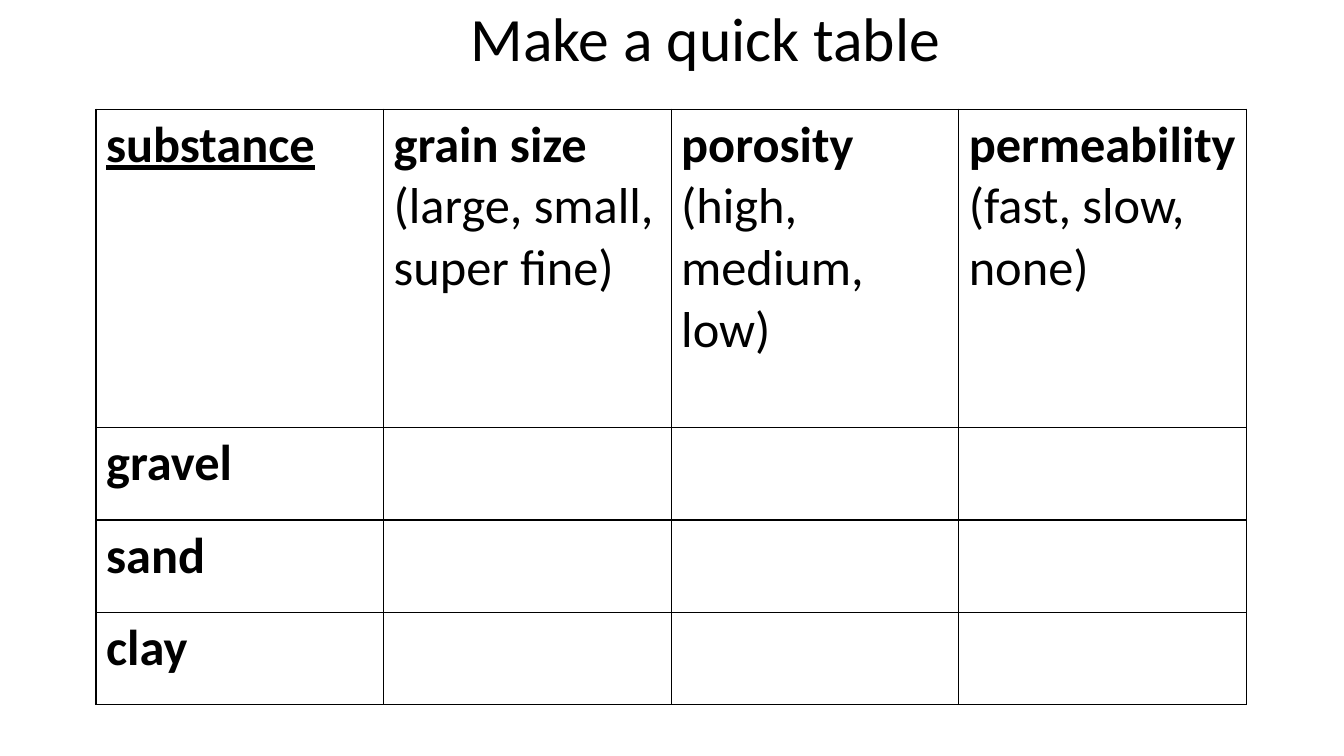
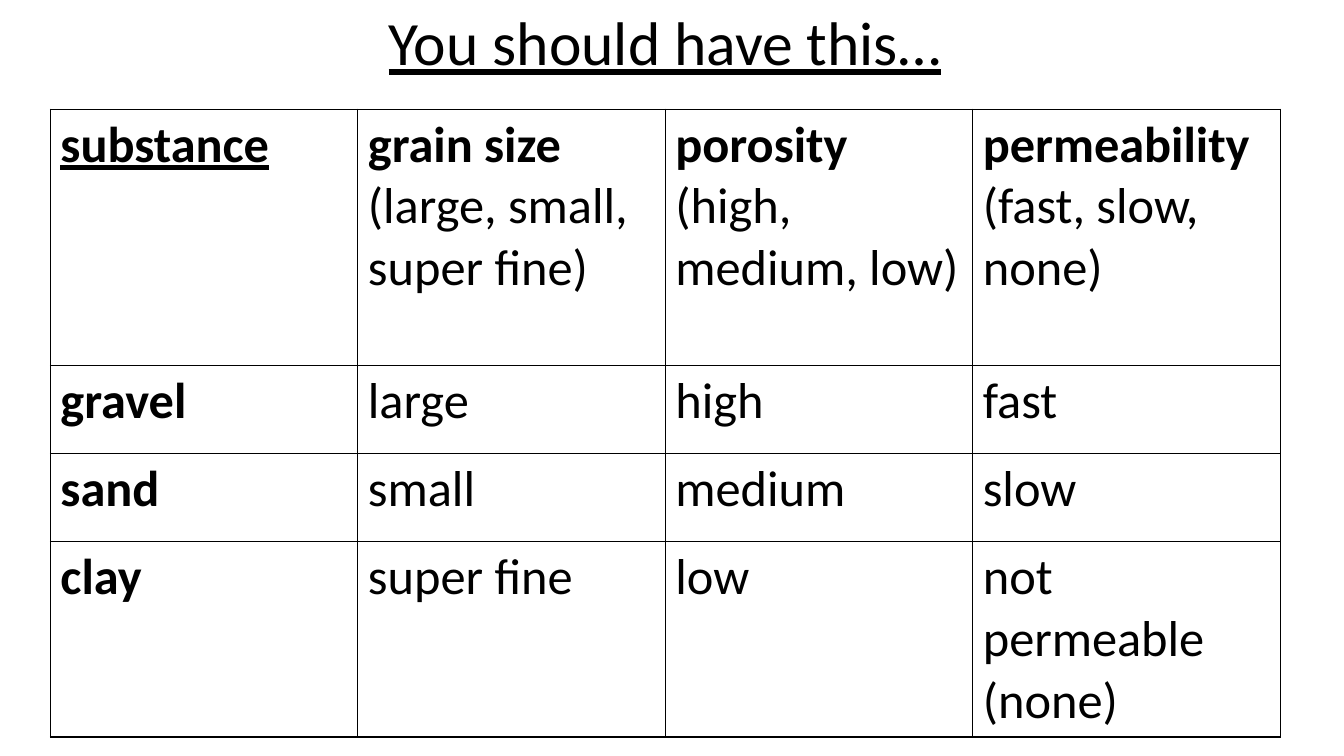
from lxml import etree
from pptx import Presentation
from pptx.dml.color import RGBColor
from pptx.enum import text
from pptx.oxml import ns
from pptx.util import Pt

COLORS = {"ink": "000000", "paper": "FFFFFF"}
HEADINGS = [("substance", ""), ("grain size ", "(large, small, super fine)"),
            ("porosity", " (high, medium, low)"),
            ("permeability", " (fast, slow, none)")]
SUBSTANCES = ["gravel", "sand", "clay"]
ANSWERS = [["large", "high", "fast"],
           ["small", "medium", "slow"],
           ["super fine", "low", "not permeable (none)"]]


class Deck:
    font = "Calibri"
    title_size = 44
    table_size = 36
    border = 1

    def __init__(self):
        self.prs = Presentation()
        self.prs.slide_width, self.prs.slide_height = Pt(960), Pt(540)
        self.s = None

    def add_slide(self):
        self.s = self.prs.slides.add_slide(self.prs.slide_layouts[6])
        fill = self.s.background.fill
        fill.solid()
        fill.fore_color.rgb = RGBColor.from_string(COLORS["paper"])

    def style(self, p, size):
        p.font.name = self.font
        p.font.size = Pt(size)
        p.font.color.rgb = RGBColor.from_string(COLORS["ink"])

    def title(self, words, left, width, height, underline=False):
        sp = self.s.shapes.add_textbox(Pt(left), 0, Pt(width), Pt(height))
        tf = sp.text_frame
        tf.word_wrap = True
        tf.vertical_anchor = text.MSO_ANCHOR.MIDDLE
        p = tf.paragraphs[0]
        p.text = words
        p.alignment = text.PP_ALIGN.CENTER
        p.line_spacing = 0.9
        self.style(p, self.title_size)
        p.font.underline = underline

    def outline(self, cell):
        """Draw all four borders of a table cell."""
        props = cell._tc.get_or_add_tcPr()
        for side in ("lnL", "lnR", "lnT", "lnB"):
            line = etree.SubElement(props, ns.qn("a:" + side), w=str(Pt(self.border)))
            fill = etree.SubElement(line, ns.qn("a:solidFill"))
            etree.SubElement(fill, ns.qn("a:srgbClr"), val=COLORS["ink"])

    def cell(self, cell, strong="", plain="", underline=False):
        self.outline(cell)
        cell.fill.background()
        p = cell.text_frame.paragraphs[0]
        self.style(p, self.table_size)
        for words, bold in ((strong, True), (plain, False)):
            if words:
                r = p.add_run()
                r.text = words
                r.font.bold = bold
                r.font.underline = underline

    def table(self, left, col_width, row_heights, answers=None):
        """Draw the substance table, with empty cells if no answers are given."""
        rows, cols = len(row_heights), len(HEADINGS)
        frame = self.s.shapes.add_table(rows, cols, Pt(left), Pt(78),
                                        Pt(col_width * cols), Pt(sum(row_heights)))
        table = frame.table
        table.first_row = table.horz_banding = False
        for col in table.columns:
            col.width = Pt(col_width)
        for row, height in zip(table.rows, row_heights):
            row.height = Pt(height)
        for c, (name, choices) in enumerate(HEADINGS):
            self.cell(table.cell(0, c), name, choices, underline=c == 0)
        for r, substance in enumerate(SUBSTANCES):
            self.cell(table.cell(r + 1, 0), substance)
            for c in range(1, cols):
                answer = answers[r][c - 1] if answers else ""
                self.cell(table.cell(r + 1, c), plain=answer)


def main():
    deck = Deck()

    deck.add_slide()
    deck.title("Make a quick table", 234, 540, 60)
    deck.table(68.6, 205.4, [227.5, 66, 66, 66])

    deck.add_slide()
    deck.title("You should have this…", 61, 828, 65.5, underline=True)
    deck.table(36, 219.6, [183, 63, 63, 139.5], ANSWERS)

    deck.prs.save("out.pptx")


if __name__ == "__main__":
    main()
